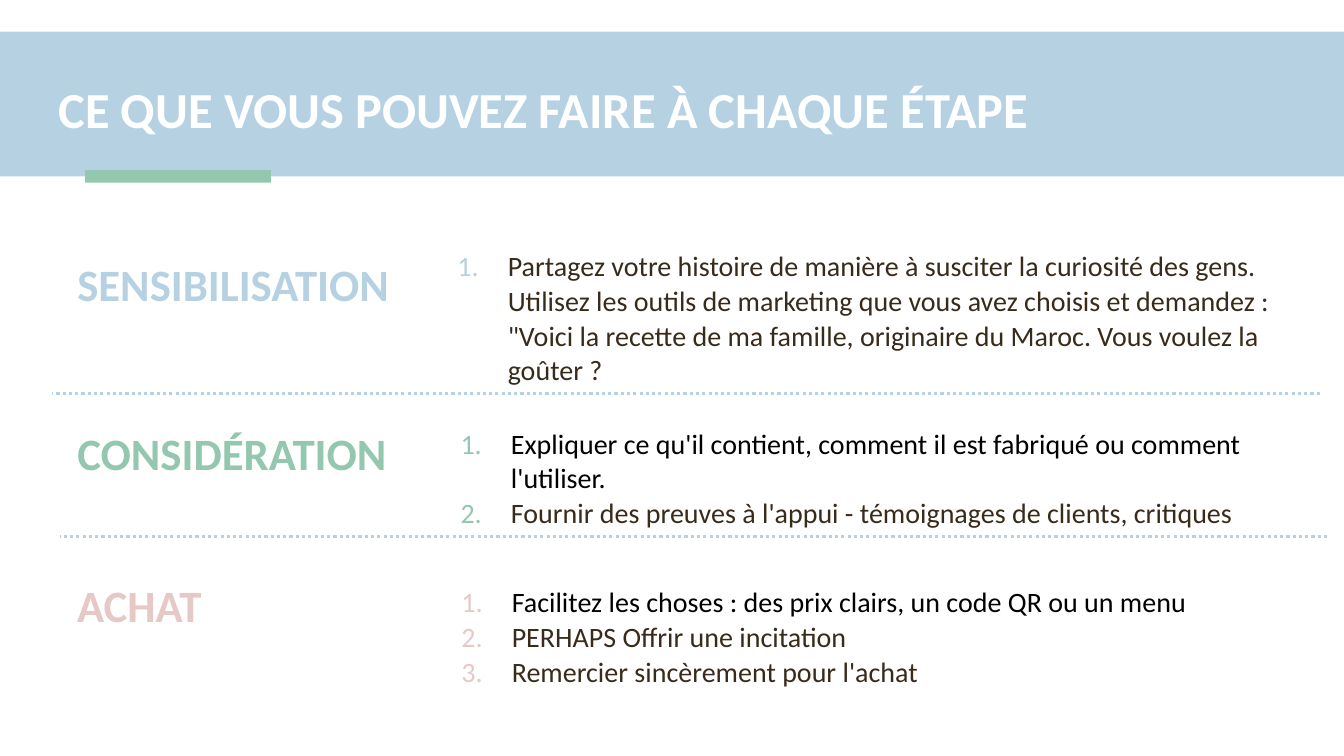
import pptx
import pptx.dml.color
import pptx.enum.dml
import pptx.enum.shapes
import pptx.enum.text
import pptx.oxml.ns
import pptx.util
from lxml import etree

BLUE = pptx.dml.color.RGBColor(0xB6, 0xD1, 0xE1)
GREEN = pptx.dml.color.RGBColor(0x94, 0xC7, 0xB0)
PINK = pptx.dml.color.RGBColor(0xE6, 0xC8, 0xC7)
BROWN = pptx.dml.color.RGBColor(0x38, 0x2B, 0x1B)
BLACK = pptx.dml.color.RGBColor(0, 0, 0)
WHITE = pptx.dml.color.RGBColor(0xFF, 0xFF, 0xFF)


class StepsSlide:
    """Draws the parts of a steps slide in one style, with lengths in px."""

    font = "Calibri"
    scale = 9525

    def __init__(self, deck, layout):
        self.slide = deck.slides.add_slide(deck.slide_layouts[layout])
        self.free = {p.placeholder_format.idx: p for p in self.slide.placeholders}

    def emu(self, *lengths):
        return [pptx.util.Emu(length * self.scale) for length in lengths]

    def bar(self, box, color, behind=False):
        bar = self.slide.shapes.add_shape(
            pptx.enum.shapes.MSO_SHAPE.RECTANGLE, *self.emu(*box))
        bar.shadow.inherit = False
        bar.fill.solid()
        bar.fill.fore_color.rgb = color
        bar.line.fill.background()
        if behind:
            self.slide.shapes._spTree.insert(2, bar._element)

    def divider(self, left, right, y):
        divider = self.slide.shapes.add_connector(
            pptx.enum.shapes.MSO_CONNECTOR.STRAIGHT, *self.emu(right, y, left, y))
        divider.line.color.rgb = BLUE
        divider.line.width = pptx.util.Pt(2.25)
        divider.line.dash_style = pptx.enum.dml.MSO_LINE.ROUND_DOT
        etree.SubElement(divider._element.spPr, pptx.oxml.ns.qn("a:effectLst"))

    def frame(self, box, holder, anchor):
        place = self.emu(*box)
        if holder in self.free:
            shape = self.free.pop(holder)
            shape.left, shape.top, shape.width, shape.height = place
        else:
            shape = self.slide.shapes.add_textbox(*place)
        frame = shape.text_frame
        frame.word_wrap = True
        frame.auto_size = pptx.enum.text.MSO_AUTO_SIZE.NONE
        frame.vertical_anchor = anchor
        return frame

    def add_words(self, paragraph, words, size, color, bold, spacing):
        paragraph.alignment = pptx.enum.text.PP_ALIGN.LEFT
        paragraph.line_spacing = spacing
        paragraph.space_before = pptx.util.Pt(0)
        run = paragraph.add_run()
        run.text = words
        run.font.name = self.font
        run.font.size = pptx.util.Pt(size)
        run.font.bold = bold
        run.font.color.rgb = color

    def heading(self, box, words, size, color, holder=None, spacing=0.9,
                anchor=pptx.enum.text.MSO_ANCHOR.TOP):
        frame = self.frame(box, holder, anchor)
        self.add_words(frame.paragraphs[0], words, size, color, True, spacing)

    def numbered(self, box, items, number_color, holder=None):
        frame = self.frame(box, holder, pptx.enum.text.MSO_ANCHOR.TOP)
        qn = pptx.oxml.ns.qn
        indent, = self.emu(48)
        for index, (words, color) in enumerate(items):
            paragraph = frame.add_paragraph() if index else frame.paragraphs[0]
            properties = paragraph._p.get_or_add_pPr()
            properties.set("marL", str(indent))
            properties.set("indent", str(-indent))
            tint = etree.SubElement(properties, qn("a:buClr"))
            etree.SubElement(tint, qn("a:srgbClr"), val=str(number_color))
            etree.SubElement(properties, qn("a:buFont"), typeface=self.font)
            etree.SubElement(properties, qn("a:buAutoNum"), type="arabicPeriod")
            self.add_words(paragraph, words, 20, color, False, pptx.util.Pt(24.8))


def main():
    deck = pptx.Presentation()
    deck.slide_width = pptx.util.Emu(1280 * StepsSlide.scale)
    deck.slide_height = pptx.util.Emu(720 * StepsSlide.scale)
    page = StepsSlide(deck, 4)

    page.bar((0, 30, 1280, 138), BLUE, behind=True)
    page.bar((81, 162, 177, 12), GREEN)
    page.heading((46, 56, 955, 101), "CE QUE VOUS POUVEZ FAIRE À CHAQUE ÉTAPE",
                 36, WHITE, holder=0, anchor=pptx.enum.text.MSO_ANCHOR.MIDDLE)

    awareness = [
        ("Partagez votre histoire de manière à susciter la curiosité des gens. "
         "Utilisez les outils de marketing que vous avez choisis et demandez : "
         "\"Voici la recette de ma famille, originaire du Maroc. "
         "Vous voulez la goûter ?", BROWN)]
    consideration = [
        ("Expliquer ce qu'il contient, comment il est fabriqué ou comment "
         "l'utiliser.", BLACK),
        ("Fournir des preuves à l'appui - témoignages de clients, critiques", BROWN)]
    purchase = [
        ("Facilitez les choses : des prix clairs, un code QR ou un menu", BLACK),
        ("PERHAPS Offrir une incitation", BROWN),
        ("Remercier sincèrement pour l'achat", BROWN)]

    steps = [
        ("SENSIBILISATION", BLUE, 260, pptx.util.Pt(23.4), 1,
         (426, 231, 850, 135), awareness, 2),
        ("CONSIDÉRATION", GREEN, 406, 0.9, 3,
         (429, 400, 846, 136), consideration, 4),
        ("ACHAT", PINK, 551, 0.9, None,
         (430, 551, 846, 135), purchase, None)]
    for name, color, top, spacing, name_holder, box, items, list_holder in steps:
        page.heading((64, top, 358, 109), name, 32, color, name_holder, spacing)
        page.numbered(box, items, color, list_holder)

    page.divider(50, 1257, 375)
    page.divider(57, 1264, 511)
    deck.save("out.pptx")


if __name__ == "__main__":
    main()
